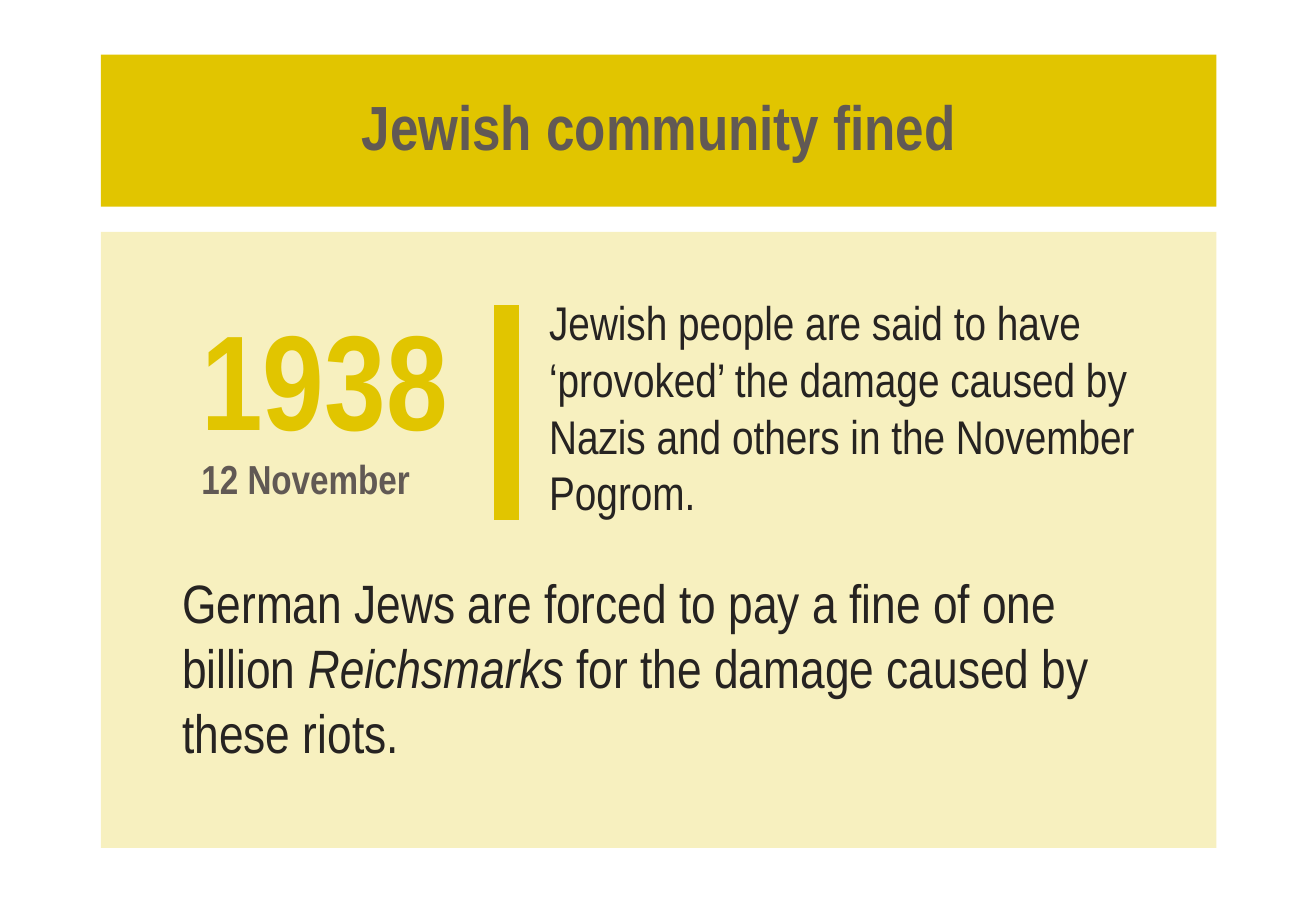
import pptx
import pptx.dml.color
import pptx.enum.shapes
import pptx.enum.text
import pptx.oxml.ns
import pptx.util
import lxml.etree
from dataclasses import dataclass

Cm = pptx.util.Cm
MIDDLE = pptx.enum.text.MSO_ANCHOR.MIDDLE

# Content: each line is a list of (text, style) runs
TITLE = [[("Jewish community fined", "title")]]
DATE = [[("1938", "year")], [("12 November", "day")]]
CAUSE = [
    [("Jewish people are said to have ‘provoked’ the damage caused by", "cause")],
    [("Nazis and others in the November Pogrom.", "cause")],
]
FINE = [[
    ("German Jews are forced to pay a fine of one billion ", "fine"),
    ("Reichsmarks ", "term"),
    ("for the damage caused by these riots.", "fine"),
]]


@dataclass(frozen=True)
class Theme:
    font: str = "Arial Narrow"
    gold: str = "E1C500"
    grey: str = "615954"
    ink: str = "262321"
    panel_opacity: int = 25
    bar_width: int = 15


THEME = Theme()
STYLES = {
    "title": (THEME.grey, {"size": 37, "bold": True, "italic": False}),
    "year": (THEME.gold, {"size": 80, "bold": True, "italic": False}),
    "day": (THEME.grey, {"size": 24, "bold": True, "italic": False}),
    "cause": (THEME.ink, {"size": 28, "bold": False, "italic": False}),
    "fine": (THEME.ink, {"size": 32, "bold": False, "italic": False}),
    "term": (THEME.ink, {"size": 32, "bold": False, "italic": True}),
}

# Layout in centimetres
SLIDE_WIDTH, SLIDE_HEIGHT = 27.51, 19.05
MARGIN = 2.11
CARD_WIDTH = 23.32
ROW_HEIGHT = 4.78
TITLE_BOX = (MARGIN, 1.14, CARD_WIDTH, 3.18)
PANEL_BOX = (MARGIN, 4.85, CARD_WIDTH, 12.88)
DATE_BOX = (3.96, 6.15, 6.2, ROW_HEIGHT)
CAUSE_BOX = (11.23, 6.12, 14.94, ROW_HEIGHT)
FINE_BOX = (3.56, 11.56, 20.6, ROW_HEIGHT)
BAR_X, BAR_TOP, BAR_BOTTOM = 10.59, 6.38, 10.87


def rgb(value):
    return pptx.dml.color.RGBColor.from_string(value)


def place(box):
    return [Cm(length) for length in box]


def write(frame, lines, **spacing):
    """Fill a frame with one paragraph whose lines are split by breaks."""
    frame_format = {
        "word_wrap": True,
        "auto_size": pptx.enum.text.MSO_AUTO_SIZE.NONE,
        "vertical_anchor": MIDDLE,
    }
    for name, value in frame_format.items():
        setattr(frame, name, value)
    paragraph = frame.paragraphs[0]
    for name, value in spacing.items():
        setattr(paragraph, name, value)
    for index, line in enumerate(lines):
        if index:
            paragraph.add_line_break()
        for text, style in line:
            run = paragraph.add_run()
            run.text = text
            color, font_format = STYLES[style]
            for name, value in font_format.items():
                setattr(run.font, name, pptx.util.Pt(value) if name == "size" else value)
            run.font.name = THEME.font
            run.font.color.rgb = rgb(color)


def add_text(shapes, box, lines, **spacing):
    write(shapes.add_textbox(*place(box)).text_frame, lines, **spacing)


def add_panel(slide):
    panel = slide.shapes.add_shape(
        pptx.enum.shapes.MSO_SHAPE.RECTANGLE, *place(PANEL_BOX))
    panel.shadow.inherit = False
    panel.fill.solid()
    panel.fill.fore_color.rgb = rgb(THEME.gold)
    panel.line.fill.background()
    color = panel.fill._xPr.find(".//" + pptx.oxml.ns.qn("a:srgbClr"))
    lxml.etree.SubElement(color, pptx.oxml.ns.qn("a:alpha"),
                          val=str(THEME.panel_opacity * 1000))


def add_bar(shapes):
    bar = shapes.add_connector(
        pptx.enum.shapes.MSO_CONNECTOR.STRAIGHT,
        *place((BAR_X, BAR_TOP, BAR_X, BAR_BOTTOM)))
    bar.line.color.rgb = rgb(THEME.gold)
    bar.line.width = pptx.util.Pt(THEME.bar_width)
    lxml.etree.SubElement(bar._element.spPr, pptx.oxml.ns.qn("a:effectLst"))


def main():
    deck = pptx.Presentation()
    deck.slide_width, deck.slide_height = Cm(SLIDE_WIDTH), Cm(SLIDE_HEIGHT)
    slide = deck.slides.add_slide(deck.slide_layouts[5])

    # Title band
    title = slide.shapes.title
    title.left, title.top, title.width, title.height = place(TITLE_BOX)
    title.fill.solid()
    title.fill.fore_color.rgb = rgb(THEME.gold)
    write(title.text_frame, TITLE, line_spacing=0.9,
          alignment=pptx.enum.text.PP_ALIGN.CENTER)

    # Pale panel and its main statement
    add_panel(slide)
    add_text(slide.shapes, FINE_BOX, FINE)

    # Date, divider bar and cause belong together
    event = slide.shapes.add_group_shape().shapes
    add_text(event, DATE_BOX, DATE, line_spacing=0.9)
    add_bar(event)
    add_text(event, CAUSE_BOX, CAUSE)

    deck.save("out.pptx")


if __name__ == "__main__":
    main()
